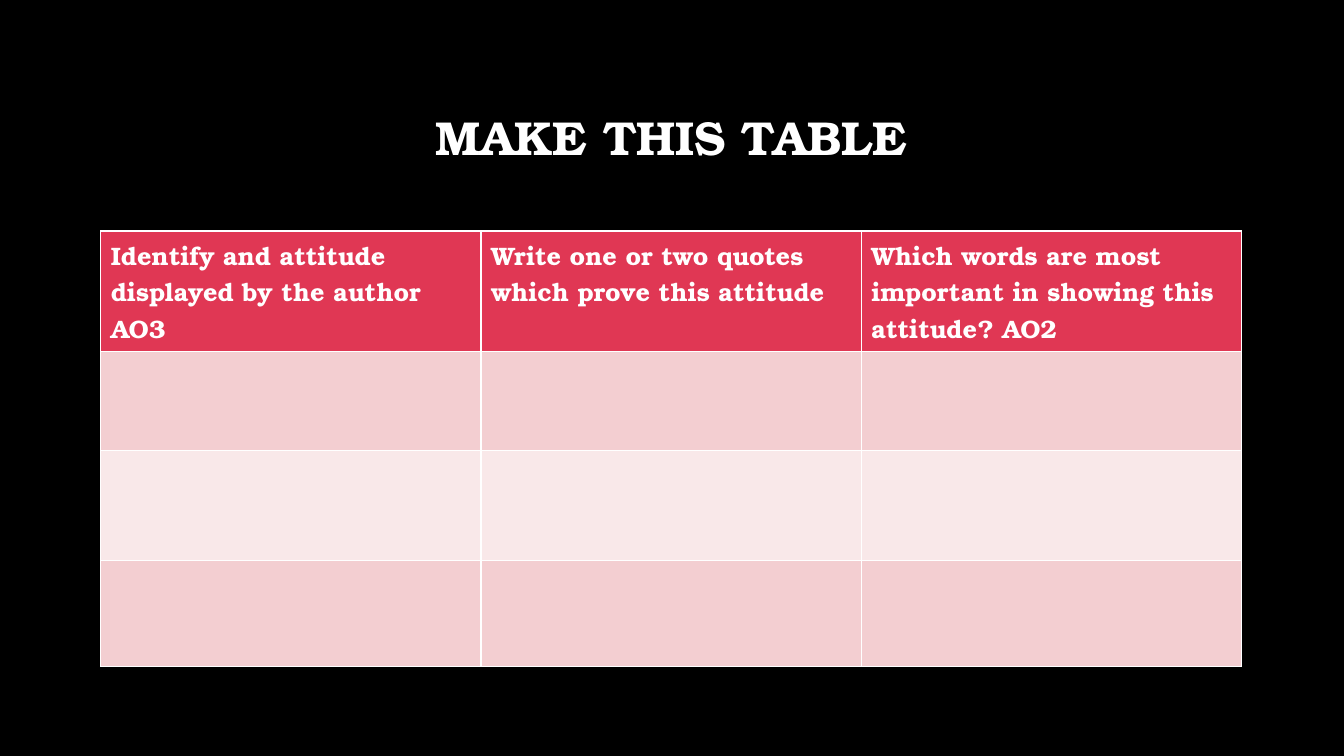
"""Build a slide with a blank study table for analysing an author's attitudes."""
from pptx import Presentation
from pptx import util as u
from pptx.dml.color import RGBColor
from pptx.enum import text

FACE = "TeX Gyre Bonum"
HEADS = [
    "Identify and attitude displayed by the author\nAO3",
    "Write one or two quotes which prove this attitude",
    "Which words are most important in showing this attitude? AO2",
]
ROWS = [(2.46, "E03754"), (2.49, "F3CED1"), (2.77, "F9E8E9"), (2.67, "F3CED1")]
LEFT, WIDE = u.Cm(2.54), u.Cm(28.75)


def paint(fill, hue):
    fill.solid()
    fill.fore_color.rgb = RGBColor.from_string(hue)


def style(para, size):
    font = para.font
    font.name, font.size, font.bold = FACE, u.Pt(size), True
    paint(font.fill, "FFFFFF")


deck = Presentation()
deck.slide_width, deck.slide_height = u.Cm(33.87), u.Cm(19.05)
slide = deck.slides.add_slide(deck.slide_layouts[5])
paint(slide.background.fill, "000000")

title = slide.shapes.title
title.left, title.top, title.width, title.height = LEFT, u.Cm(1.7), WIDE, u.Cm(3.68)
title.text_frame.text = "MAKE THIS TABLE"
title.text_frame.vertical_anchor = text.MSO_ANCHOR.MIDDLE
para = title.text_frame.paragraphs[0]
para.alignment = text.PP_ALIGN.CENTER
para.line_spacing = 0.9
style(para, 34)

high = u.Cm(sum(size for size, hue in ROWS))
table = slide.shapes.add_table(len(ROWS), len(HEADS), LEFT, u.Cm(5.82), WIDE, high).table
for row, (size, hue) in zip(table.rows, ROWS):
    row.height = u.Cm(size)
    for cell in row.cells:
        paint(cell.fill, hue)
for cell, head in zip(table.rows[0].cells, HEADS):
    cell.text = head
    for para in cell.text_frame.paragraphs:
        style(para, 18)

deck.save("out.pptx")
